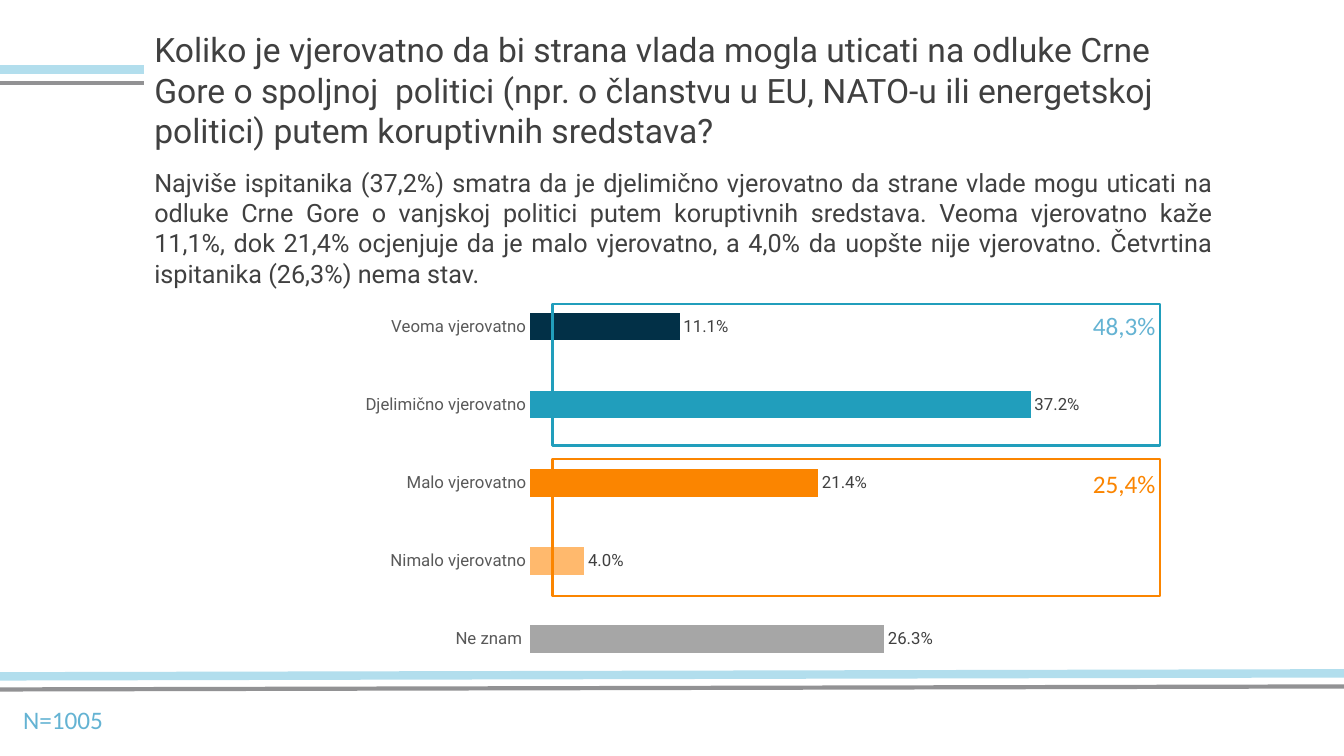
from lxml import etree
from pptx import Presentation
from pptx import util as u
from pptx.chart import data
from pptx.dml.color import RGBColor
from pptx.enum import chart as ch, shapes, text
from pptx.oxml.ns import qn

COLORS = {
    "ink": "404040", "axis": "595959", "sky": "B2DEED", "rule": "929294",
    "blue": "64B3D3", "navy": "023047", "teal": "219EBC",
    "orange": "FB8500", "peach": "FFB96D", "grey": "A6A6A6",
}

QUESTION = ("Koliko je vjerovatno da bi strana vlada mogla uticati na odluke Crne Gore "
            "o spoljnoj  politici (npr. o članstvu u EU, NATO-u ili energetskoj politici) "
            "putem koruptivnih sredstava?")
FINDING = ("Najviše ispitanika (37,2%) smatra da je djelimično vjerovatno da strane vlade "
           "mogu uticati na odluke Crne Gore o vanjskoj politici putem koruptivnih sredstava. "
           "Veoma vjerovatno kaže 11,1%, dok 21,4% ocjenjuje da je malo vjerovatno, "
           "a 4,0% da uopšte nije vjerovatno. Četvrtina ispitanika (26,3%) nema stav.")
ANSWERS = [
    ("Veoma vjerovatno", 0.111, "navy"),
    ("Djelimično vjerovatno", 0.372, "teal"),
    ("Malo vjerovatno", 0.214, "orange"),
    ("Nimalo vjerovatno", 0.04, "peach"),
    ("Ne znam ", 0.263, "grey"),
]
GROUPS = [
    (3.02, 1.4, "teal"),
    (4.55, 1.36, "orange"),
]
NOTES = [
    ("N=1005", (0.13, 6.94, 1.05, 0.4), "blue"),
    ("48,3%", (10.74, 3.03, 1.65, 0.4), "blue"),
    ("25,4%", (10.74, 4.6, 1.65, 0.4), "orange"),
]
RULES = [
    (6.84, 6.81, 13.33, "rule", 3),
    (6.71, 6.68, 13.33, "sky", 6),
    (0.82, 0.82, 1.43, "rule", 3),
    (0.69, 0.69, 1.43, "sky", 6),
]


def rgb(name):
    return RGBColor.from_string(COLORS[name])


def set_font(font, size, color, face="Roboto"):
    for key, value in {"size": u.Pt(size), "name": face, "bold": False}.items():
        setattr(font, key, value)
    font.color.rgb = rgb(color)


def write(box, words, at, size, color, face="Roboto", align=text.PP_ALIGN.LEFT):
    for key, value in zip(("left", "top", "width", "height"), at):
        setattr(box, key, u.Inches(value))
    frame = box.text_frame
    frame.text = words
    frame_format = {"word_wrap": True, "vertical_anchor": text.MSO_ANCHOR.TOP,
                    "auto_size": text.MSO_AUTO_SIZE.SHAPE_TO_FIT_TEXT}
    for key, value in frame_format.items():
        setattr(frame, key, value)
    paragraph = frame.paragraphs[0]
    for key, value in {"alignment": align, "space_before": u.Pt(0)}.items():
        setattr(paragraph, key, value)
    set_font(paragraph.runs[0].font, size, color, face)
    return paragraph


def draw_rule(slide, start_y, end_y, end_x, color, weight):
    rule = slide.shapes.add_connector(
        shapes.MSO_CONNECTOR.STRAIGHT, 0, u.Inches(start_y), u.Inches(end_x), u.Inches(end_y))
    rule.line.color.rgb = rgb(color)
    rule.line.width = u.Pt(weight)
    etree.SubElement(rule._element.spPr, qn("a:effectLst"))


def draw_answers(slide):
    names, shares, colors = zip(*ANSWERS)
    answers = data.CategoryChartData(number_format="0.0%")
    answers.categories = names
    answers.add_series("Series 1", shares)
    chart = slide.shapes.add_chart(
        ch.XL_CHART_TYPE.BAR_CLUSTERED, u.Inches(3.48), u.Inches(2.77),
        u.Inches(7.26), u.Inches(4.04), answers).chart
    chart.has_legend = chart.has_title = False
    set_font(chart.font, 12, "ink")

    category_format = {"reverse_order": True, "has_major_gridlines": False,
                       "major_tick_mark": ch.XL_TICK_MARK.NONE}
    share_format = {"visible": False, "has_major_gridlines": False,
                    "minimum_scale": 0, "maximum_scale": 0.4}
    for axis, settings in ((chart.category_axis, category_format),
                           (chart.value_axis, share_format)):
        for key, value in settings.items():
            setattr(axis, key, value)
    chart.category_axis.format.line.fill.background()
    set_font(chart.category_axis.tick_labels.font, 12, "axis")

    plot = chart.plots[0]
    for key, value in {"gap_width": 182, "vary_by_categories": False}.items():
        setattr(plot, key, value)
    bars = plot.series[0]
    for index, color in enumerate(colors):
        fill = bars.points[index].format.fill
        fill.solid()
        fill.fore_color.rgb = rgb(color)
    labels = bars.data_labels
    label_format = {"show_value": True, "position": ch.XL_LABEL_POSITION.OUTSIDE_END,
                    "number_format": "0.0%", "number_format_is_linked": False}
    for key, value in label_format.items():
        setattr(labels, key, value)
    set_font(labels.font, 12, "ink")


def main():
    deck = Presentation()
    deck.slide_width, deck.slide_height = u.Inches(13.33), u.Inches(7.5)
    slide = deck.slides.add_slide(deck.slide_layouts[1])
    question, finding = slide.placeholders

    write(question, QUESTION, (1.43, 0.24, 10.7, 1.31), 24, "ink")
    body = write(finding, FINDING, (1.43, 1.61, 10.7, 1.31), 18, "ink",
                 align=text.PP_ALIGN.JUSTIFY)
    properties = body._p.get_or_add_pPr()
    for key in ("marL", "indent"):
        properties.set(key, "0")
    etree.SubElement(properties, qn("a:buNone"))

    for rule in RULES:
        draw_rule(slide, *rule)
    draw_answers(slide)
    for top, height, color in GROUPS:
        group = slide.shapes.add_shape(
            shapes.MSO_SHAPE.RECTANGLE, u.Inches(5.48), u.Inches(top),
            u.Inches(6.03), u.Inches(height))
        group.shadow.inherit = False
        group.fill.background()
        group.line.color.rgb = rgb(color)
        group.line.width = u.Pt(1.5)
    for words, at, color in NOTES:
        write(slide.shapes.add_textbox(0, 0, 0, 0), words, at, 18, color, "Calibri")

    deck.save("out.pptx")


if __name__ == "__main__":
    main()
